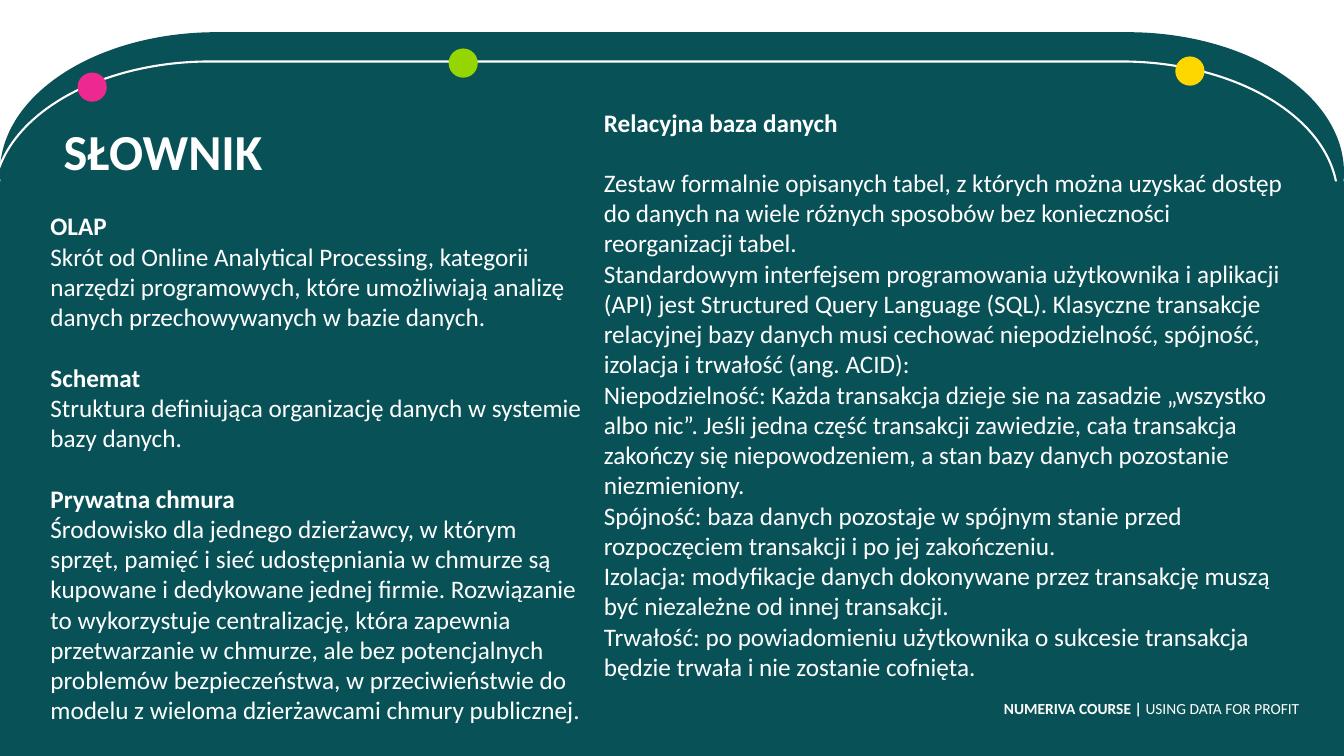
import pptx
import pptx.dml.color
import pptx.enum.shapes
import pptx.enum.text
import pptx.oxml.ns
import pptx.util
from lxml import etree

Pt = pptx.util.Pt
SHAPE = pptx.enum.shapes.MSO_SHAPE
ALIGN = pptx.enum.text.PP_ALIGN
ANCHOR = pptx.enum.text.MSO_ANCHOR

# Content
TITLE = "SŁOWNIK"
FOOTER = [("NUMERIVA COURSE |", True), (" USING DATA FOR PROFIT", False)]
GLOSSARY = [
    ("OLAP",
     "Skrót od Online Analytical Processing, kategorii narzędzi programowych, które umożliwiają "
     "analizę danych przechowywanych w bazie danych."),
    ("Schemat",
     "Struktura definiująca organizację danych w systemie bazy danych."),
    ("Prywatna chmura",
     "Środowisko dla jednego dzierżawcy, w którym sprzęt, pamięć i sieć udostępniania w chmurze są "
     "kupowane i dedykowane jednej firmie. Rozwiązanie to wykorzystuje centralizację, która zapewnia "
     "przetwarzanie w chmurze, ale bez potencjalnych problemów bezpieczeństwa, w przeciwieństwie do "
     "modelu z wieloma dzierżawcami chmury publicznej."),
]
DATABASE_TERM = "Relacyjna baza danych"
DATABASE_DEFINITION = [
    "Zestaw formalnie opisanych tabel, z których można uzyskać dostęp do danych na wiele różnych "
    "sposobów bez konieczności reorganizacji tabel.",
    "Standardowym interfejsem programowania użytkownika i aplikacji (API) jest Structured Query "
    "Language (SQL). Klasyczne transakcje relacyjnej bazy danych musi cechować niepodzielność, "
    "spójność, izolacja i trwałość (ang. ACID):",
    "Niepodzielność: Każda transakcja dzieje sie na zasadzie „wszystko albo nic”. Jeśli jedna część "
    "transakcji zawiedzie, cała transakcja zakończy się niepowodzeniem, a stan bazy danych pozostanie "
    "niezmieniony.",
    "Spójność: baza danych pozostaje w spójnym stanie przed rozpoczęciem transakcji i po jej "
    "zakończeniu.",
    "Izolacja: modyfikacje danych dokonywane przez transakcję muszą być niezależne od innej "
    "transakcji.",
    "Trwałość: po powiadomieniu użytkownika o sukcesie transakcja będzie trwała i nie zostanie "
    "cofnięta.",
]

# Look and places, in points
TEAL, WHITE = "085156", "FFFFFF"
WIDTH, HEIGHT = 960, 540
LINE_GAP = 21.6
DOT_SIZE = 20.9
DOTS = [(320.4, 34.6, "95D600"), (839.5, 40.3, "FFD700"), (55.4, 51.8, "ED2891")]
TITLE_BOX = (38.2, 85, 267.1, 49.7)
LEFT_BOX = (28.8, 146.9, 395.3, 399.6)
RIGHT_BOX = (424.1, 72.7, 511.2, 421.9)
FOOTER_BOX = (65.5, 496.1, 869.8, 32.4)


def color(value):
    return pptx.dml.color.RGBColor.from_string(value)


def add_shape(slide, kind, box, fill=None, line=None):
    shape = slide.shapes.add_shape(kind, *map(Pt, box))
    shape.shadow.inherit = False
    if fill:
        shape.fill.solid()
        shape.fill.fore_color.rgb = color(fill)
    else:
        shape.fill.background()
    if line:
        shape.line.color.rgb = color(line)
        shape.line.width = Pt(1.5)
    else:
        shape.line.fill.background()


def write_text(paragraph, text, size=18, bold=False, before=0, spacing=1.0, align=ALIGN.LEFT):
    paragraph.alignment = align
    paragraph.line_spacing = spacing
    paragraph.space_before = Pt(before)
    run = paragraph.add_run()
    run.text = text
    run.font.name = "Calibri"
    run.font.size = Pt(size)
    run.font.bold = bold
    run.font.color.rgb = color(WHITE)


def prepare_frame(shape, box, anchor=ANCHOR.TOP):
    shape.left, shape.top, shape.width, shape.height = map(Pt, box)
    frame = shape.text_frame
    frame.word_wrap = True
    frame.auto_size = pptx.enum.text.MSO_AUTO_SIZE.NONE
    frame.vertical_anchor = anchor
    return frame


def fill_column(shape, box, entries):
    """Each entry is a text, whether it is bold, and the space before it."""
    frame = prepare_frame(shape, box)
    for index, (text, bold, before) in enumerate(entries):
        paragraph = frame.add_paragraph() if index else frame.paragraphs[0]
        properties = paragraph._p.get_or_add_pPr()
        properties.set("marL", "0")
        properties.set("indent", "0")
        etree.SubElement(properties, pptx.oxml.ns.qn("a:buNone"))
        write_text(paragraph, text, bold=bold, before=before)


def main():
    presentation = pptx.Presentation()
    presentation.slide_width, presentation.slide_height = Pt(WIDTH), Pt(HEIGHT)
    slide = presentation.slides.add_slide(presentation.slide_layouts[3])
    title, left_column, right_column = list(slide.placeholders)

    # Rounded panel, its outline and the dots
    add_shape(slide, SHAPE.FLOWCHART_TERMINATOR, (0, 23, WIDTH, 200.2), fill=TEAL)
    add_shape(slide, SHAPE.FLOWCHART_TERMINATOR, (-4.5, 43.9, WIDTH, 195.8), line=WHITE)
    add_shape(slide, SHAPE.RECTANGLE, (0, 129.6, WIDTH, HEIGHT - 129.6), fill=TEAL)
    for left, top, fill in DOTS:
        add_shape(slide, SHAPE.OVAL, (left, top, DOT_SIZE, DOT_SIZE), fill=fill)

    # Placeholders go in front of the panel
    for placeholder in (title, left_column, right_column):
        placeholder.element.getparent().append(placeholder.element)

    # Title and the two columns
    frame = prepare_frame(title, TITLE_BOX, ANCHOR.MIDDLE)
    write_text(frame.paragraphs[0], TITLE, size=36, bold=True, spacing=0.9)

    terms = []
    for term, definition in GLOSSARY:
        terms += [(term, True, LINE_GAP if terms else 0), (definition, False, 0)]
    fill_column(left_column, LEFT_BOX, terms)

    first, *others = DATABASE_DEFINITION
    fill_column(right_column, RIGHT_BOX,
                [(DATABASE_TERM, True, 0), (first, False, LINE_GAP)]
                + [(text, False, 0) for text in others])

    # Footer
    footer = slide.shapes.add_textbox(*map(Pt, FOOTER_BOX))
    paragraph = prepare_frame(footer, FOOTER_BOX).paragraphs[0]
    for text, bold in FOOTER:
        write_text(paragraph, text, size=11, bold=bold, align=ALIGN.RIGHT)

    presentation.save("out.pptx")


if __name__ == "__main__":
    main()
